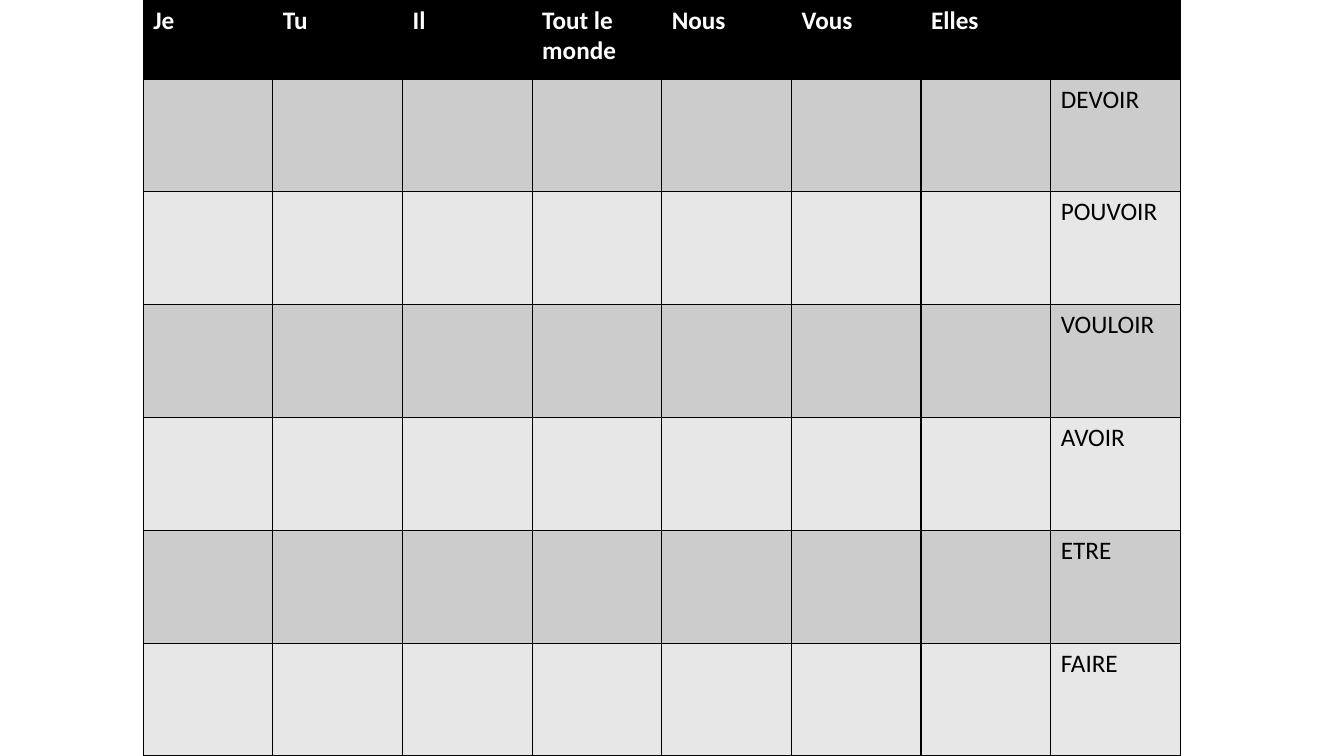
from dataclasses import dataclass

from lxml.etree import SubElement
from pptx import Presentation
from pptx.dml.color import RGBColor
from pptx.oxml.ns import qn
from pptx.table import Table, _Cell as Cell
from pptx.util import Cm, Pt

BLACK = RGBColor(0x00, 0x00, 0x00)
WHITE = RGBColor(0xFF, 0xFF, 0xFF)
DARK_BAND = RGBColor(0xCC, 0xCC, 0xCC)
LIGHT_BAND = RGBColor(0xE7, 0xE7, 0xE7)

PRONOUNS = ["Je", "Tu", "Il", "Tout le monde", "Nous", "Vous", "Elles"]
VERBS = ["DEVOIR", "POUVOIR", "VOULOIR", "AVOIR", "ETRE", "FAIRE"]

SLIDE_WIDTH, SLIDE_HEIGHT = Cm(33.87), Cm(19.05)
GRID_LEFT, GRID_WIDTH = Cm(3.61), Cm(26.14)
HEADER_HEIGHT = Cm(1.99)


@dataclass
class GridRow:
    texts: list[str]
    fill: RGBColor
    color: RGBColor = BLACK
    bold: bool = False


def write_text(cell: Cell, text: str, *, size: float = 18, color: RGBColor = BLACK,
               bold: bool = False, face: str = "Calibri") -> None:
    paragraph = cell.text_frame.paragraphs[0]
    font = paragraph.font
    if text:
        run = paragraph.add_run()
        run.text = text
        font = run.font
    font.name, font.size, font.bold = face, Pt(size), bold
    font.color.rgb = color


def add_borders(cell: Cell, color: RGBColor = BLACK, width: float = 1) -> None:
    properties = cell._tc.get_or_add_tcPr()
    for side in ("a:lnL", "a:lnR", "a:lnT", "a:lnB"):
        border = SubElement(properties, qn(side), w=str(Pt(width)))
        SubElement(SubElement(border, qn("a:solidFill")), qn("a:srgbClr"), val=str(color))


def draw_row(grid: Table, index: int, row: GridRow) -> None:
    for column, text in enumerate(row.texts):
        cell = grid.cell(index, column)
        # Borders precede the fill in the cell properties
        add_borders(cell)
        cell.fill.solid()
        cell.fill.fore_color.rgb = row.fill
        write_text(cell, text, color=row.color, bold=row.bold)


def main() -> None:
    deck = Presentation()
    deck.slide_width, deck.slide_height = SLIDE_WIDTH, SLIDE_HEIGHT
    slide = deck.slides.add_slide(deck.slide_layouts[6])

    # Pronouns across the top, verbs down the last column
    rows = [GridRow(PRONOUNS + [""], BLACK, WHITE, bold=True)]
    for number, verb in enumerate(VERBS):
        band = LIGHT_BAND if number % 2 else DARK_BAND
        rows.append(GridRow([""] * len(PRONOUNS) + [verb], band))

    # Conjugation grid
    column_count = len(PRONOUNS) + 1
    grid = slide.shapes.add_table(len(rows), column_count, GRID_LEFT, Cm(0),
                                  GRID_WIDTH, SLIDE_HEIGHT).table
    for column in grid.columns:
        column.width = GRID_WIDTH // column_count
    for index, row in enumerate(rows):
        verb_height = (SLIDE_HEIGHT - HEADER_HEIGHT) // len(VERBS)
        grid.rows[index].height = verb_height if index else HEADER_HEIGHT
        draw_row(grid, index, row)

    deck.save("out.pptx")


if __name__ == "__main__":
    main()
